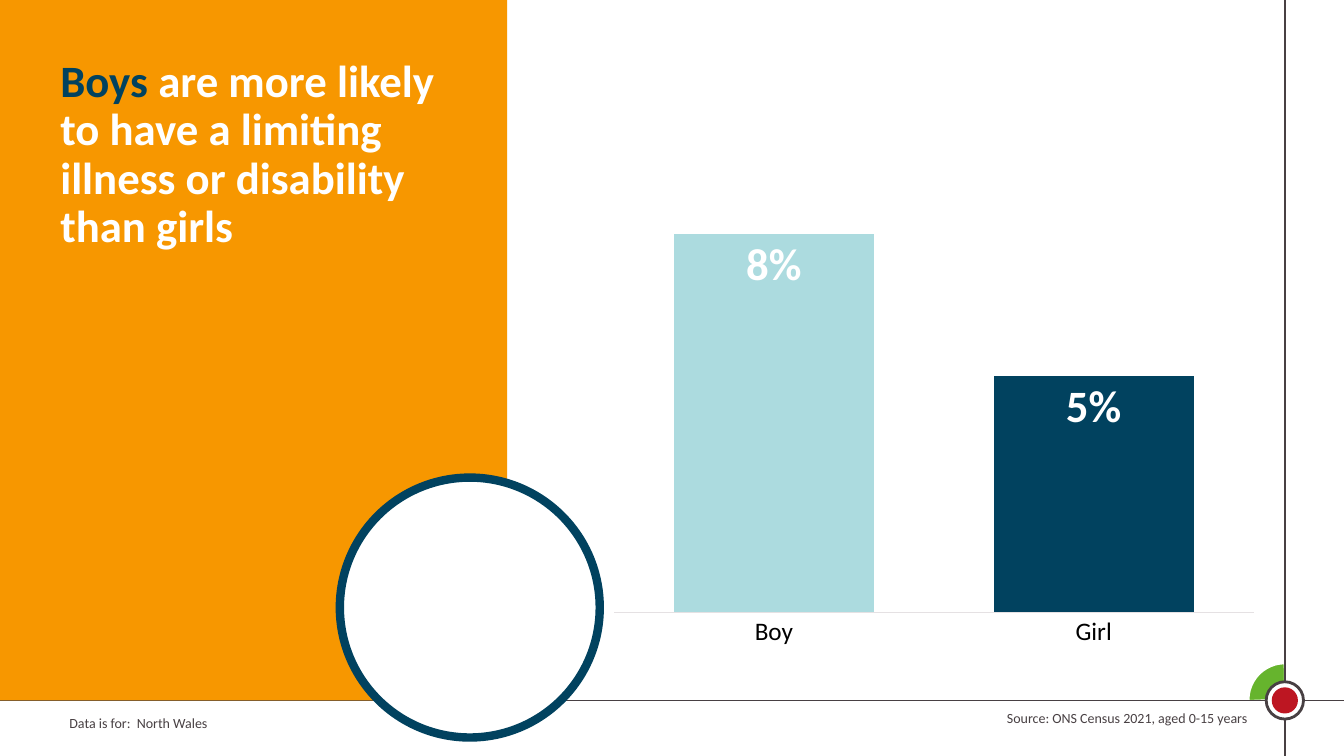
from collections import namedtuple

from lxml import etree
from pptx import Presentation
from pptx.chart import data as chart_data
from pptx.dml.color import RGBColor
from pptx.enum import chart as charts, shapes, text
from pptx.oxml import parse_xml
from pptx.oxml.ns import nsdecls, qn
from pptx.util import Cm, Pt

ORANGE = RGBColor(0xF7, 0x97, 0x00)
NAVY = RGBColor(0x01, 0x42, 0x5F)
AQUA = RGBColor(0xAC, 0xDB, 0xDF)
GREEN = RGBColor(0x66, 0xB4, 0x2D)
RED = RGBColor(0xBD, 0x16, 0x22)
GREY = RGBColor(0x48, 0x40, 0x43)
PALE_GREY = RGBColor(0xE5, 0xE1, 0xE3)
WHITE = RGBColor(0xFF, 0xFF, 0xFF)
BLACK = RGBColor(0, 0, 0)

Box = namedtuple("Box", "left top width height")
PAGE = Box(0, 0, 33.87, 19.05)
PANEL = Box(0, 0, 12.78, 17.65)
FOOTER = Box(0, 17.65, 33.87, 1.4)
CHART = Box(15.14, 4.7, 16.79, 11.79)
MARGIN_X = 32.38


def lengths(box):
    return [Cm(value) for value in box]


def centred(x, y, size):
    """Return a square box around a point."""
    return Box(x - size / 2, y - size / 2, size, size)


def style_font(font, **values):
    color = values.pop("color")
    for name, value in {"name": "Calibri", **values}.items():
        setattr(font, name, value)
    font.color.rgb = color


def add_figure(slide, kind, box, fill, line=None, weight=0):
    figure = slide.shapes.add_shape(kind, *lengths(box))
    figure.shadow.inherit = False
    figure.fill.solid()
    figure.fill.fore_color.rgb = fill
    if line is None:
        figure.line.fill.background()
    else:
        figure.line.color.rgb = line
        figure.line.width = Pt(weight)
    return figure


def add_rule(slide, x1, y1, x2, y2):
    rule = slide.shapes.add_connector(
        shapes.MSO_CONNECTOR.STRAIGHT, Cm(x1), Cm(y1), Cm(x2), Cm(y2))
    rule.line.color.rgb = GREY
    rule.line.width = Pt(1)
    etree.SubElement(rule._element.spPr, qn("a:effectLst"))


def add_words(slide, box, runs, size, bold=False,
              align=text.PP_ALIGN.LEFT, spacing=1.0):
    """Add a one-paragraph text box from (wording, colour) runs."""
    frame = slide.shapes.add_textbox(*lengths(box)).text_frame
    frame.word_wrap = True
    frame.auto_size = text.MSO_AUTO_SIZE.SHAPE_TO_FIT_TEXT
    paragraph = frame.paragraphs[0]
    paragraph.alignment = align
    paragraph.line_spacing = spacing
    for wording, color in runs:
        run = paragraph.add_run()
        run.text = wording
        style_font(run.font, size=Pt(size), bold=bold, color=color)


def add_page_lines(slide, page):
    """Draw the crossing rules and the badge at their meeting point."""
    x, y = MARGIN_X, FOOTER.top
    quarter = add_figure(slide, shapes.MSO_SHAPE.PIE, centred(x, y - 0.02, 1.83),
                         GREEN, WHITE, 1.5)
    quarter.adjustments[0] = 106.617
    quarter.adjustments[1] = 162
    add_rule(slide, x, page.top, x, page.top + page.height)
    add_rule(slide, page.left, y, page.left + page.width, y)
    add_figure(slide, shapes.MSO_SHAPE.OVAL, centred(x, y, 0.94), WHITE, GREY, 2)
    add_figure(slide, shapes.MSO_SHAPE.OVAL, centred(x, y, 0.66), RED)


def add_message_panel(slide, panel):
    add_figure(slide, shapes.MSO_SHAPE.RECTANGLE, panel, ORANGE)
    circle = centred(panel.left + 11.84, panel.top + 15.31, 6.55)
    add_figure(slide, shapes.MSO_SHAPE.OVAL, circle, WHITE, NAVY, 6)
    message = Box(panel.left + 1.27, panel.top + 1.35, 10.72, 6.4)
    runs = [("Boys", NAVY),
            (" are more likely to have a limiting illness or disability than girls",
             WHITE)]
    add_words(slide, message, runs, 32, bold=True, spacing=0.9)


def add_footer(slide, footer):
    area = Box(footer.left + 1.5, footer.top + 0.23, 11.15, 0.68)
    source = Box(footer.left + 24.18, footer.top + 0.1, 7.5, 0.68)
    add_words(slide, area, [("Data is for:  North Wales", GREY)], 10)
    add_words(slide, source, [("Source: ONS Census 2021, aged 0-15 years", GREY)],
              10, align=text.PP_ALIGN.RIGHT)


def fix_plot_area(chart, **fractions):
    """Pin the inner plot area to fractions of the chart."""
    sizes = "".join(f'<c:{key} val="{value}"/>' for key, value in fractions.items())
    layout = parse_xml(
        f'<c:layout {nsdecls("c")}><c:manualLayout><c:layoutTarget val="inner"/>'
        f'<c:xMode val="edge"/><c:yMode val="edge"/>{sizes}'
        '</c:manualLayout></c:layout>')
    plot_area = chart._chartSpace.chart.plotArea
    for old in plot_area.findall(qn("c:layout")):
        plot_area.remove(old)
    plot_area.insert(0, layout)


def add_illness_chart(slide, box):
    shares = chart_data.CategoryChartData(number_format="0%")
    shares.categories = ["Boy", "Girl"]
    shares.add_series("Series 1", [0.08, 0.05])
    chart = slide.shapes.add_chart(
        charts.XL_CHART_TYPE.COLUMN_CLUSTERED, *lengths(box), shares).chart
    chart.has_legend = chart.has_title = False
    style_font(chart.font, size=Pt(16), color=GREY)
    fix_plot_area(chart, x=0.02, y=0.03, w=0.96, h=0.88)

    children = chart.category_axis
    children.major_tick_mark = charts.XL_TICK_MARK.NONE
    children.format.line.color.rgb = PALE_GREY
    children.format.line.width = Pt(0.75)
    style_font(children.tick_labels.font, size=Pt(18), color=BLACK)

    scale = chart.value_axis
    for name, value in {"visible": False, "has_major_gridlines": False,
                        "minimum_scale": 0, "maximum_scale": 0.087}.items():
        setattr(scale, name, value)
    scale.tick_labels.number_format = "0.0%"
    scale.tick_labels.number_format_is_linked = False

    columns = chart.plots[0]
    columns.vary_by_categories = False
    columns.gap_width = 60
    illness = columns.series[0]
    for bar, color in ((illness, AQUA), (illness.points[1], NAVY)):
        bar.format.fill.solid()
        bar.format.fill.fore_color.rgb = color
    labels = illness.data_labels
    for name, value in {"show_value": True, "number_format": "0%",
                        "number_format_is_linked": False,
                        "position": charts.XL_LABEL_POSITION.INSIDE_END}.items():
        setattr(labels, name, value)
    style_font(labels.font, size=Pt(32), bold=True, color=WHITE)


def main():
    deck = Presentation()
    deck.slide_width, deck.slide_height = Cm(PAGE.width), Cm(PAGE.height)
    slide = deck.slides.add_slide(deck.slide_layouts[6])
    add_page_lines(slide, PAGE)
    add_message_panel(slide, PANEL)
    add_footer(slide, FOOTER)
    add_illness_chart(slide, CHART)
    deck.save("out.pptx")


if __name__ == "__main__":
    main()
